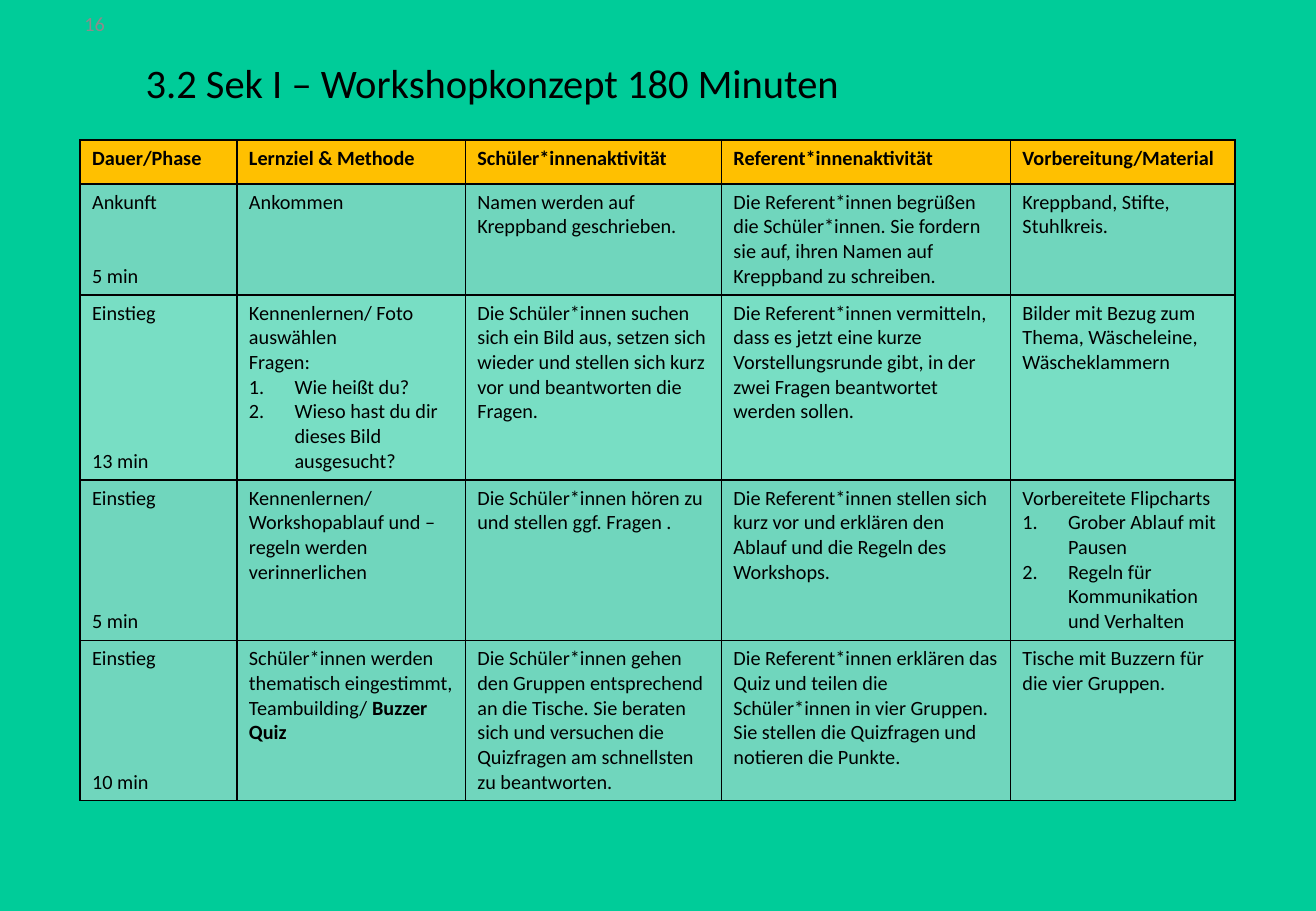
from dataclasses import dataclass

from lxml.etree import SubElement
from pptx import Presentation
from pptx.dml.color import RGBColor
from pptx.enum.text import MSO_ANCHOR as Anchor, PP_ALIGN as Align
from pptx.oxml import parse_xml
from pptx.oxml.ns import nsdecls, qn
from pptx.slide import Slide
from pptx.table import _Cell as Cell
from pptx.text.text import _Paragraph as Paragraph
from pptx.util import Pt

FONT = "Calibri"
BLACK = "000000"
BODY_SIZE = 12
LINE_HEIGHT = 14.65
NUMBER_INDENT = 27


@dataclass(frozen=True)
class Line:
    text: str
    bold_end: str = ""
    numbered: bool = False
    blank_above: int = 0


@dataclass(frozen=True)
class Label:
    text: str
    left: float
    top: float
    width: float
    height: float
    size: float
    color: str
    align: Align
    spacing: float = 1


@dataclass(frozen=True)
class Phase:
    name: str
    duration: str
    gap: int
    height: float
    tint: str
    goal: tuple[Line, ...]
    pupils: str
    speakers: str
    material: tuple[Line, ...]

    def columns(self) -> list[tuple[Line, ...]]:
        timing = (Line(self.name), Line(self.duration, blank_above=self.gap))
        return [timing, self.goal, (Line(self.pupils),), (Line(self.speakers),), self.material]


LABELS = [
    Label("3.2 Sek I – Workshopkonzept 180 Minuten", 79.2, 25.9, 620.6, 49, 24, BLACK, Align.LEFT, 0.9),
    Label("16", -31.7, -0.7, 175.7, 28.8, 12, "8C8C8C", Align.CENTER),
]

COLUMN_WIDTHS = [93, 135.4, 151.8, 171.3, 133.2]
HEADER_HEIGHT = 26
HEADINGS = [
    "Dauer/Phase",
    "Lernziel & Methode",
    "Schüler*innenaktivität",
    "Referent*innenaktivität",
    "Vorbereitung/Material",
]

PHASES = [
    Phase(
        "Ankunft", "5 min", 2, 65.8, "E1E1E1",
        (Line("Ankommen"),),
        "Namen werden auf Kreppband geschrieben.",
        "Die Referent*innen begrüßen die Schüler*innen. Sie fordern sie auf, "
        "ihren Namen auf Kreppband zu schreiben.",
        (Line("Kreppband, Stifte, Stuhlkreis."),),
    ),
    Phase(
        "Einstieg", "13 min", 5, 109.7, "F0F0F0",
        (
            Line("Kennenlernen/ Foto auswählen"),
            Line("Fragen:"),
            Line("Wie heißt du?", numbered=True),
            Line("Wieso hast du dir dieses Bild ausgesucht?", numbered=True),
        ),
        "Die Schüler*innen suchen sich ein Bild aus, setzen sich wieder und "
        "stellen sich kurz vor und beantworten die Fragen.",
        "Die Referent*innen vermitteln, dass es jetzt eine kurze Vorstellungsrunde gibt, "
        "in der zwei Fragen beantwortet werden sollen.",
        (Line("Bilder mit Bezug zum Thema, Wäscheleine, Wäscheklammern"),),
    ),
    Phase(
        "Einstieg", "5 min", 4, 95.1, "E1E1E1",
        (Line("Kennenlernen/"), Line("Workshopablauf und –regeln werden verinnerlichen")),
        "Die Schüler*innen hören zu und stellen ggf. Fragen .",
        "Die Referent*innen stellen sich kurz vor und erklären den Ablauf "
        "und die Regeln des Workshops.",
        (
            Line("Vorbereitete Flipcharts"),
            Line("Grober Ablauf mit Pausen", numbered=True),
            Line("Regeln für Kommunikation und Verhalten", numbered=True),
        ),
    ),
    Phase(
        "Einstieg", "10 min", 4, 95.1, "E1E1E1",
        (Line("Schüler*innen werden thematisch eingestimmt, Teambuilding/ ", "Buzzer Quiz"),),
        "Die Schüler*innen gehen den Gruppen entsprechend an die Tische. Sie beraten sich "
        "und versuchen die Quizfragen am schnellsten zu beantworten.",
        "Die Referent*innen erklären das Quiz und teilen die Schüler*innen in vier Gruppen. "
        "Sie stellen die Quizfragen und notieren die Punkte.",
        (Line("Tische mit Buzzern für die vier Gruppen."),),
    ),
]


def rgb(color: str) -> RGBColor:
    return RGBColor.from_string(color)


def add_run(paragraph: Paragraph, text: str, size: float, color: str, bold: bool = False) -> None:
    run = paragraph.add_run()
    run.text = text
    run.font.name = FONT
    run.font.size = Pt(size)
    run.font.bold = bold
    run.font.color.rgb = rgb(color)


def number(paragraph: Paragraph) -> None:
    properties = paragraph._p.get_or_add_pPr()
    properties.set("marL", str(Pt(NUMBER_INDENT)))
    properties.set("indent", str(-Pt(NUMBER_INDENT)))
    SubElement(properties, qn("a:buFont"), typeface="+mj-lt")
    SubElement(properties, qn("a:buAutoNum"), type="arabicPeriod")


def fill_cell(cell: Cell, lines: tuple[Line, ...], color: str, opacity: int, bold: bool = False) -> None:
    cell.fill.solid()
    cell.fill.fore_color.rgb = rgb(color)
    properties = cell._tc.get_or_add_tcPr()
    tint = properties.find(qn("a:solidFill")).find(qn("a:srgbClr"))
    SubElement(tint, qn("a:alpha"), val=str(opacity * 1000))
    for position, side in enumerate("LRTB"):
        border = parse_xml(
            f'<a:ln{side} {nsdecls("a")} w="{Pt(1)}"><a:solidFill>'
            f'<a:srgbClr val="{BLACK}"/></a:solidFill></a:ln{side}>'
        )
        properties.insert(position, border)
    frame = cell.text_frame
    for position, line in enumerate(lines):
        paragraph = frame.add_paragraph() if position else frame.paragraphs[0]
        if line.blank_above:
            paragraph.space_before = Pt(line.blank_above * LINE_HEIGHT)
        if line.numbered:
            number(paragraph)
        add_run(paragraph, line.text, BODY_SIZE, BLACK, bold)
        if line.bold_end:
            add_run(paragraph, line.bold_end, BODY_SIZE, BLACK, True)


def add_label(slide: Slide, label: Label) -> None:
    box = slide.shapes.add_textbox(Pt(label.left), Pt(label.top), Pt(label.width), Pt(label.height))
    frame = box.text_frame
    frame.word_wrap = True
    frame.vertical_anchor = Anchor.MIDDLE
    paragraph = frame.paragraphs[0]
    paragraph.alignment = label.align
    paragraph.line_spacing = label.spacing
    add_run(paragraph, label.text, label.size, label.color)


def add_schedule(slide: Slide) -> None:
    heights = [HEADER_HEIGHT] + [phase.height for phase in PHASES]
    schedule = slide.shapes.add_table(
        len(heights), len(HEADINGS), Pt(47.4), Pt(83), Pt(sum(COLUMN_WIDTHS)), Pt(sum(heights))
    ).table
    schedule.first_row = False
    schedule.horz_banding = False
    for column, width in zip(schedule.columns, COLUMN_WIDTHS):
        column.width = Pt(width)
    for row, height in zip(schedule.rows, heights):
        row.height = Pt(height)
    for column, heading in enumerate(HEADINGS):
        fill_cell(schedule.cell(0, column), (Line(heading),), "FFC000", 100, True)
    for row, phase in enumerate(PHASES, 1):
        for column, lines in enumerate(phase.columns()):
            fill_cell(schedule.cell(row, column), lines, phase.tint, 50)


def main() -> None:
    deck = Presentation()
    deck.slide_width, deck.slide_height = Pt(780), Pt(540)
    slide = deck.slides.add_slide(deck.slide_layouts[6])
    slide.background.fill.solid()
    slide.background.fill.fore_color.rgb = rgb("00CC99")
    add_schedule(slide)
    for label in LABELS:
        add_label(slide, label)
    deck.save("out.pptx")


if __name__ == "__main__":
    main()
